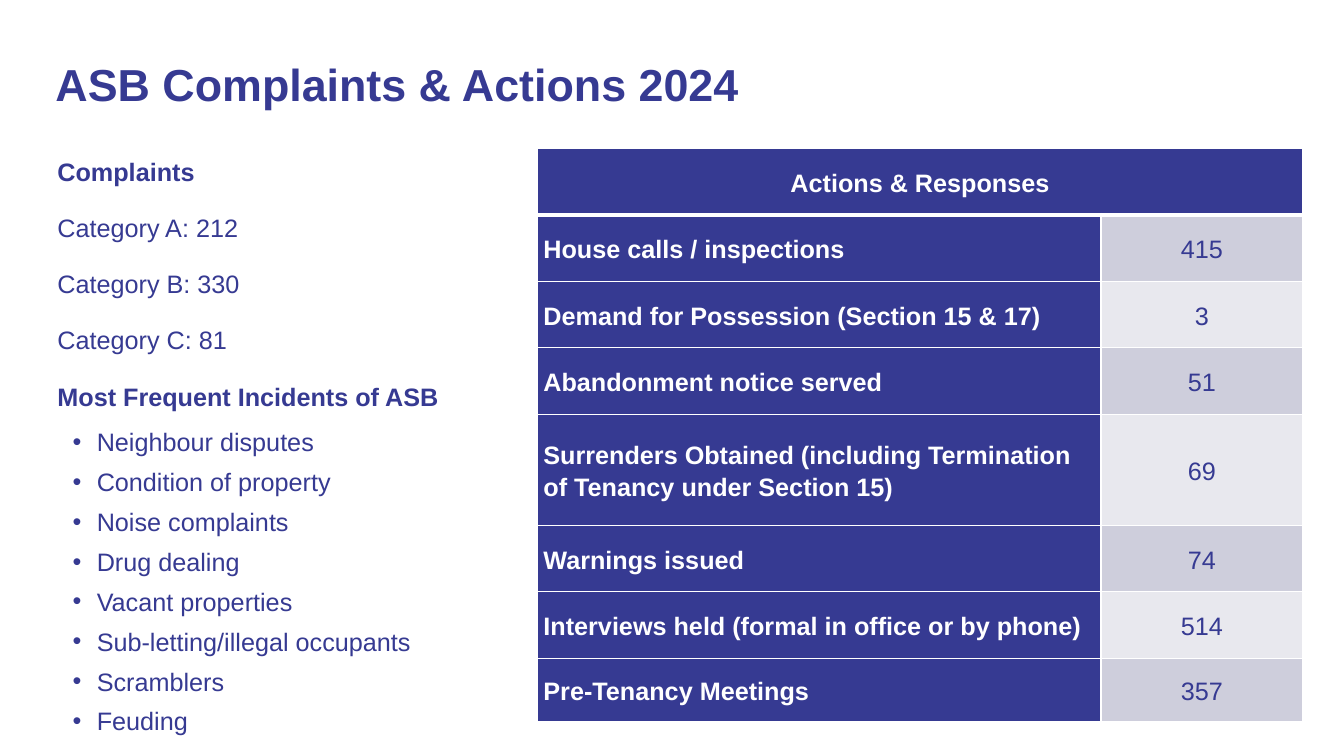
from lxml.etree import SubElement
from pptx import Presentation
from pptx.dml.color import RGBColor
from pptx.enum.text import MSO_ANCHOR as Anchor, PP_ALIGN as Align
from pptx.oxml.ns import qn
from pptx.util import Inches, Pt

INDIGO, WHITE = "363A92", "FFFFFF"
BANDS = ("CECEDC", "E8E8EE")

COMPLAINTS = ["Category A: 212", "Category B: 330", "Category C: 81"]
INCIDENTS = [
    "Neighbour disputes", "Condition of property", "Noise complaints", "Drug dealing",
    "Vacant properties", "Sub-letting/illegal occupants", "Scramblers", "Feuding",
]
ACTIONS = [
    ("House calls / inspections", 415, 0.66),
    ("Demand for Possession (Section 15 & 17)", 3, 0.66),
    ("Abandonment notice served", 51, 0.66),
    ("Surrenders Obtained (including Termination of Tenancy under Section 15)", 69, 1.1),
    ("Warnings issued", 74, 0.66),
    ("Interviews held (formal in office or by phone)", 514, 0.66),
    ("Pre-Tenancy Meetings", 357, 0.63),
]


def color(value):
    return RGBColor.from_string(value)


def add_run(paragraph, text, size=18, bold=False, text_color=INDIGO):
    run = paragraph.add_run()
    run.text = text
    run.font.name = "Arial"
    run.font.size = Pt(size)
    run.font.bold = bold
    run.font.color.rgb = color(text_color)


def add_text_frame(slide, left, top, width, height, anchor):
    frame = slide.shapes.add_textbox(
        Inches(left), Inches(top), Inches(width), Inches(height)).text_frame
    frame.word_wrap = True
    frame.vertical_anchor = anchor
    frame.margin_left = frame.margin_right = frame.margin_top = frame.margin_bottom = 0
    return frame


def add_bullet(paragraph):
    properties = paragraph._p.get_or_add_pPr()
    properties.set("marL", str(Inches(0.39)))
    properties.set("indent", str(Inches(-0.24)))
    SubElement(properties, qn("a:buFont"), typeface="Arial")
    SubElement(properties, qn("a:buChar"), char="•")


def add_title(slide, left, top, width, height):
    frame = add_text_frame(slide, left, top, width, height, Anchor.MIDDLE)
    add_run(frame.paragraphs[0], "ASB Complaints & Actions 2024", 32, True)


def add_complaints(slide, left, top, width, height):
    frame = add_text_frame(slide, left, top, width, height, Anchor.TOP)
    heading = frame.paragraphs[0]
    heading.space_after = Pt(11)
    add_run(heading, "Complaints", bold=True)
    incidents_heading = "Most Frequent Incidents of ASB"
    for text in COMPLAINTS + [incidents_heading]:
        paragraph = frame.add_paragraph()
        paragraph.line_spacing = 1.35
        paragraph.space_after = Pt(11)
        add_run(paragraph, text, bold=text == incidents_heading)
    for text in INCIDENTS:
        paragraph = frame.add_paragraph()
        add_bullet(paragraph)
        paragraph.space_after = Pt(6.9)
        add_run(paragraph, text)


def set_borders(cell, bottom_width=1):
    properties = cell._tc.get_or_add_tcPr()
    for position, side in enumerate("LRTB"):
        width = bottom_width if side == "B" else 1
        line = properties.makeelement(qn(f"a:ln{side}"), {"w": str(Pt(width))})
        fill = SubElement(line, qn("a:solidFill"))
        SubElement(fill, qn("a:srgbClr"), val=WHITE)
        properties.insert(position, line)


def fill_cell(cell, text, fill, text_color, bold, align, bottom_width=1):
    cell.fill.solid()
    cell.fill.fore_color.rgb = color(fill)
    cell.vertical_anchor = Anchor.MIDDLE
    cell.margin_left = cell.margin_right = Inches(0.06)
    cell.margin_top = cell.margin_bottom = Inches(0.06)
    set_borders(cell, bottom_width)
    paragraph = cell.text_frame.paragraphs[0]
    paragraph.alignment = align
    paragraph.line_spacing = 1.15
    paragraph.space_after = Pt(8)
    add_run(paragraph, text, bold=bold, text_color=text_color)


def add_actions_table(slide, left, top, width, height):
    table = slide.shapes.add_table(
        len(ACTIONS) + 1, 2, Inches(left), Inches(top), Inches(width), Inches(height)).table
    count_width = 2
    table.columns[0].width = Inches(width - count_width)
    table.columns[1].width = Inches(count_width)
    table.rows[0].height = Inches(0.66)
    header = table.cell(0, 0)
    header.merge(table.cell(0, 1))
    fill_cell(header, "Actions & Responses", INDIGO, WHITE, True, Align.CENTER, 3)
    set_borders(table.cell(0, 1), 3)
    for index, (action, count, row_height) in enumerate(ACTIONS):
        row = index + 1
        table.rows[row].height = Inches(row_height)
        fill_cell(table.cell(row, 0), action, INDIGO, WHITE, True, Align.LEFT)
        fill_cell(table.cell(row, 1), str(count), BANDS[index % 2], INDIGO, False, Align.CENTER)


def main():
    presentation = Presentation()
    presentation.slide_width = Inches(13.33)
    presentation.slide_height = Inches(7.5)
    slide = presentation.slides.add_slide(presentation.slide_layouts[6])
    add_complaints(slide, 0.57, 1.55, 4.44, 4.6)
    add_title(slide, 0.55, 0.36, 6.98, 0.94)
    add_actions_table(slide, 5.33, 1.47, 7.59, 5.67)
    presentation.save("out.pptx")


if __name__ == "__main__":
    main()
